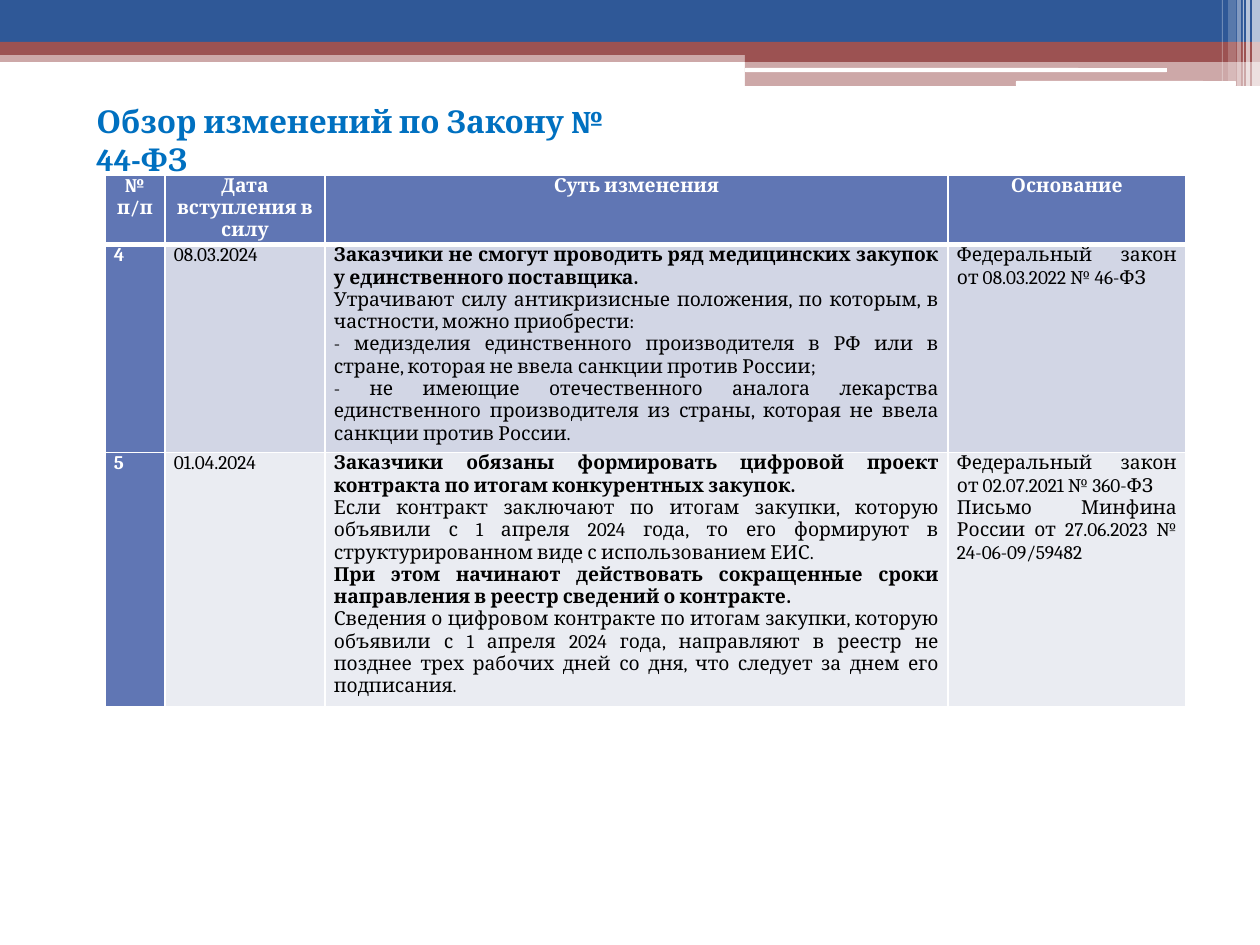
import pptx
import pptx.util
import pptx.dml.color
import pptx.enum.shapes
import pptx.enum.text
import pptx.oxml
import pptx.oxml.ns

RGB = pptx.dml.color.RGBColor
SHAPE = pptx.enum.shapes.MSO_SHAPE
ALIGN = pptx.enum.text.PP_ALIGN
PX = 914400 / 126

NAVY = RGB(0x2F, 0x58, 0x97)
RED = RGB(0x9C, 0x52, 0x52)
WHITE = RGB(0xFF, 0xFF, 0xFF)
BLACK = RGB(0, 0, 0)
TITLE_BLUE = RGB(0x00, 0x70, 0xC0)
HEAD_BLUE = RGB(0x60, 0x76, 0xB4)
ROW_FILLS = [RGB(0xD2, 0xD6, 0xE5), RGB(0xEA, 0xEC, 0xF2)]

TITLE = "Обзор изменений по Закону № 44-ФЗ"
HEADERS = ["№ п/п", "Дата вступления в силу", "Суть изменения", "Основание"]
CHANGES = [
    ("4", "08.03.2024", [
        ("Заказчики не смогут проводить ряд медицинских закупок у единственного поставщика.", True),
        ("Утрачивают силу антикризисные положения, по которым, в частности, можно приобрести:", False),
        ("- медизделия единственного производителя в РФ или в стране, которая не ввела санкции против России;", False),
        ("- не имеющие отечественного аналога лекарства единственного производителя из страны, "
         "которая не ввела санкции против России.", False),
    ], ["Федеральный закон от 08.03.2022 № 46-ФЗ"]),
    ("5", "01.04.2024", [
        ("Заказчики обязаны формировать цифровой проект контракта по итогам конкурентных закупок.", True),
        ("Если контракт заключают по итогам закупки, которую объявили с 1 апреля 2024 года, "
         "то его формируют в структурированном виде с использованием ЕИС.", False),
        ("При этом начинают действовать сокращенные сроки направления в реестр сведений о контракте.", True),
        ("Сведения о цифровом контракте по итогам закупки, которую объявили с 1 апреля 2024 года, "
         "направляют в реестр не позднее трех рабочих дней со дня, что следует за днем его подписания.", False),
    ], ["Федеральный закон от 02.07.2021 № 360-ФЗ", "Письмо Минфина России от 27.06.2023 № 24-06-09/59482"]),
]


def emu(px):
    """Convert pixels to EMU."""
    return pptx.util.Emu(round(px * PX))


def add_run(p, text, size, color, bold):
    """Add one formatted run to a paragraph."""
    r = p.add_run()
    r.text = text
    r.font.color.rgb = color
    for name, value in {"name": "Cambria", "size": pptx.util.Pt(size), "bold": bold}.items():
        setattr(r.font, name, value)


def add_bar(s, box, color, alpha=100, kind=SHAPE.RECTANGLE):
    """Draw a borderless bar with the given opacity in percent."""
    sp = s.shapes.add_shape(kind, *map(emu, box))
    sp.shadow.inherit = False
    sp.line.fill.background()
    sp.fill.solid()
    sp.fill.fore_color.rgb = color
    if alpha < 100:
        clr = sp.fill._xPr.find(".//" + pptx.oxml.ns.qn("a:srgbClr"))
        clr.append(pptx.oxml.parse_xml(
            f'<a:alpha {pptx.oxml.ns.nsdecls("a")} val="{alpha * 1000}"/>'))


def add_banner(s, x, y, w):
    """Draw the layered top banner with its light stripes at the right end."""
    step = x + 745
    right = x + w
    add_bar(s, (x, y + 50, w, 12), RED, 50)
    add_bar(s, (x, y, w, 42), NAVY)
    add_bar(s, (x, y + 42, w, 13), RED)
    add_bar(s, (step, y + 49, right - step, 13), RED)
    add_bar(s, (step, y + 61, right - step, 25), RED, 50)
    add_bar(s, (step, y + 68, 422, 4), WHITE, kind=SHAPE.ROUNDED_RECTANGLE)
    add_bar(s, (x + 1016, y + 81, 220, 5), WHITE, kind=SHAPE.ROUNDED_RECTANGLE)
    stripes = [(8, 8, 86, 65), (14, 4, 86, 65), (17, 1, 86, 60),
               (23, 4, 86, 40), (32, 8, 81, 20), (38, 1, 81, 30)]
    for offset, width, height, alpha in stripes:
        add_bar(s, (right - offset, y, width, height), WHITE, alpha)


def add_title(s, x, y, w, h):
    """Write the slide title."""
    tf = s.shapes.add_textbox(*map(emu, (x, y, w, h))).text_frame
    tf.word_wrap = True
    add_run(tf.paragraphs[0], TITLE, 18, TITLE_BLUE, True)


def set_borders(cell, widths):
    """Give a cell white borders of the given widths in points."""
    tcPr = cell._tc.get_or_add_tcPr()
    for i, (side, width) in enumerate(widths.items()):
        tcPr.insert(i, pptx.oxml.parse_xml(
            f'<a:ln{side} {pptx.oxml.ns.nsdecls("a")} w="{pptx.util.Pt(width)}">'
            f'<a:solidFill><a:srgbClr val="{WHITE}"/></a:solidFill></a:ln{side}>'))


def fill_cell(cell, lines, align, color, fill, borders):
    """Fill a cell with paragraphs given as text and bold pairs."""
    margins = {"margin_left": 9, "margin_right": 9, "margin_top": 0, "margin_bottom": 0}
    for name, value in margins.items():
        setattr(cell, name, emu(value))
    cell.fill.solid()
    cell.fill.fore_color.rgb = fill
    set_borders(cell, borders)
    tf = cell.text_frame
    for i, (text, bold) in enumerate(lines):
        p = tf.add_paragraph() if i else tf.paragraphs[0]
        p.alignment = align
        add_run(p, text, 11, color, bold)


def add_changes_table(s, x, y, cols, rows):
    """Build the table of law changes from column widths and row heights."""
    box = map(emu, (x, y, sum(cols), sum(rows)))
    table = s.shapes.add_table(len(rows), len(cols), *box).table
    for col, width in zip(table.columns, cols):
        col.width = emu(width)
    for row, height in zip(table.rows, rows):
        row.height = emu(height)
    thin = {"L": 1, "R": 1, "T": 1, "B": 1}
    for c, text in enumerate(HEADERS):
        fill_cell(table.cell(0, c), [(text, True)], ALIGN.CENTER, WHITE, HEAD_BLUE, {**thin, "B": 3})
    for i, (number, date, details, basis) in enumerate(CHANGES):
        borders = thin if i else {**thin, "T": 3}
        fill_cell(table.cell(i + 1, 0), [(number, True)], ALIGN.JUSTIFY, WHITE, HEAD_BLUE, borders)
        contents = [[(date, False)], details, [(text, False) for text in basis]]
        for c, lines in enumerate(contents, 1):
            fill_cell(table.cell(i + 1, c), lines, ALIGN.JUSTIFY, BLACK, ROW_FILLS[i], borders)


def main():
    """Build and save the slide."""
    prs = pptx.Presentation()
    prs.slide_width, prs.slide_height = emu(1260), emu(945)
    s = prs.slides.add_slide(prs.slide_layouts[6])
    add_banner(s, 0, 0, 1260)
    add_title(s, 84, 96, 568, 50)
    add_changes_table(s, 105, 175, [60, 160, 623, 238], [67, 199, 241])
    prs.save("out.pptx")


if __name__ == "__main__":
    main()
